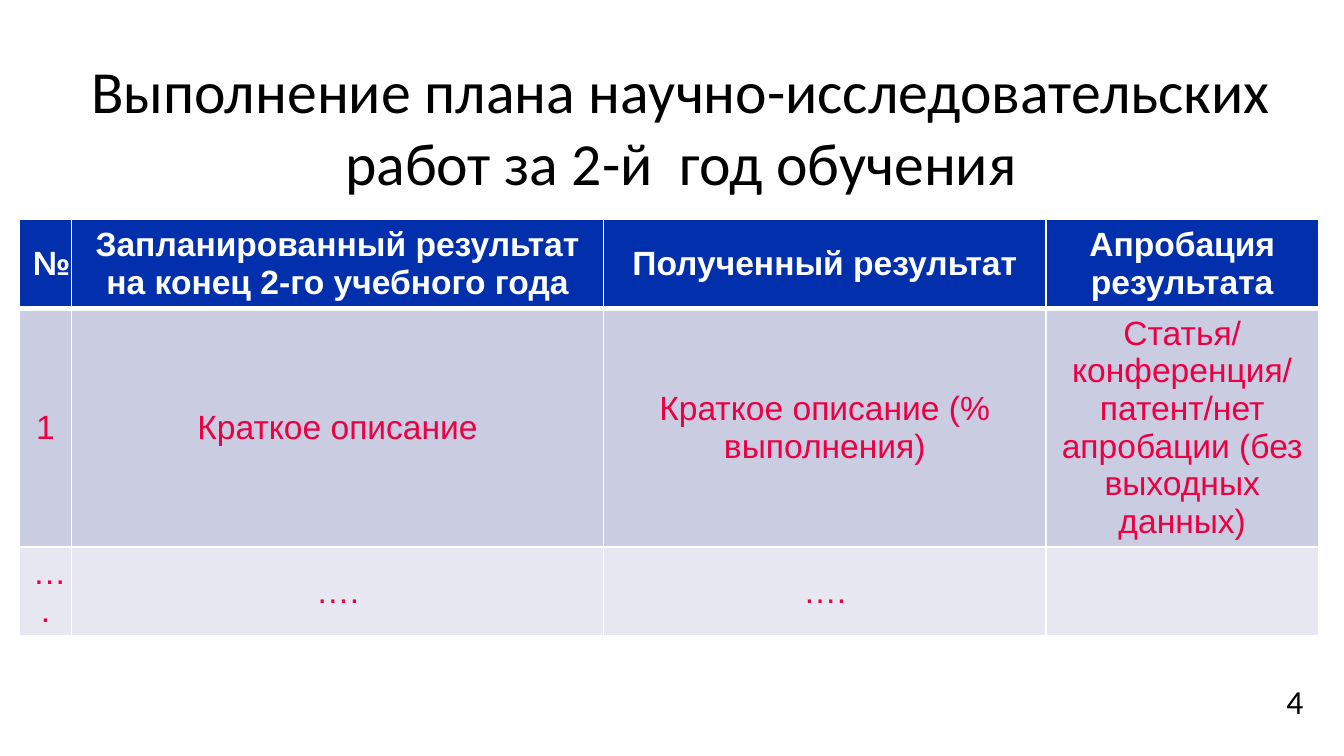
from lxml import etree
from pptx import Presentation
from pptx.dml.color import RGBColor
from pptx.enum import text as t
from pptx.oxml import ns
from pptx.util import Pt

COLORS = {
    "ink": "000000",
    "white": "FFFFFF",
    "header": "0230AC",
    "accent": "EC0044",
    "band_dark": "CACCE2",
    "band_light": "E6E7F1",
}

PLAN = [
    ["№", "Запланированный результат на конец 2-го учебного года",
     "Полученный результат", "Апробация результата"],
    ["1", "Краткое описание", "Краткое описание (% выполнения)",
     "Статья/конференция/патент/нет апробации (без выходных данных)"],
    ["….", "….", "….", ""],
]
COLUMN_WIDTHS = [28, 285, 237, 146]
ROW_HEIGHTS = [40, 29, 29]
ROW_FILLS = ["header", "band_dark", "band_light"]


def rgb(name):
    return RGBColor.from_string(COLORS[name])


def add_run(paragraph, words, size, font, color, bold=False):
    run = paragraph.add_run()
    run.text = words
    run.font.size = Pt(size)
    run.font.name = font
    run.font.bold = bold
    run.font.color.rgb = rgb(color)


def set_borders(cell, bottom_width):
    """White rules around a cell, with their own weight below it."""
    properties = cell._tc.get_or_add_tcPr()
    for side, width in (("L", 1), ("R", 1), ("T", 1), ("B", bottom_width)):
        line = etree.SubElement(properties, ns.qn(f"a:ln{side}"), w=str(Pt(width)))
        fill = etree.SubElement(line, ns.qn("a:solidFill"))
        etree.SubElement(fill, ns.qn("a:srgbClr"), val=COLORS["white"])


def place_title(slide, left, top, width, height):
    title = slide.shapes.title
    title.left, title.top, title.width, title.height = map(
        Pt, (left, top, width, height))
    frame = title.text_frame
    frame.auto_size = t.MSO_AUTO_SIZE.NONE
    frame.word_wrap = True
    frame.vertical_anchor = t.MSO_ANCHOR.BOTTOM
    heading = frame.paragraphs[0]
    heading.alignment = t.PP_ALIGN.CENTER
    add_run(heading, "Выполнение плана научно-исследовательских работ за 2-й  год обучения",
            32, "Calibri", "ink")


def place_plan(slide, left, top):
    plan = slide.shapes.add_table(
        len(PLAN), len(COLUMN_WIDTHS), Pt(left), Pt(top),
        Pt(sum(COLUMN_WIDTHS)), Pt(sum(ROW_HEIGHTS))).table
    for column, width in zip(plan.columns, COLUMN_WIDTHS):
        column.width = Pt(width)
    for row_number, (row, height) in enumerate(zip(plan.rows, ROW_HEIGHTS)):
        row.height = Pt(height)
        is_header = row_number == 0
        for cell, words in zip(row.cells, PLAN[row_number]):
            set_borders(cell, 3 if is_header else 1)
            cell.fill.solid()
            cell.fill.fore_color.rgb = rgb(ROW_FILLS[row_number])
            cell.vertical_anchor = t.MSO_ANCHOR.MIDDLE
            entry = cell.text_frame.paragraphs[0]
            entry.alignment = t.PP_ALIGN.CENTER
            if words:
                add_run(entry, words, 18, "Arial",
                        "white" if is_header else "accent", is_header)


def place_page_number(slide, left, top, width, height):
    number = slide.shapes.add_textbox(Pt(left), Pt(top), Pt(width), Pt(height))
    number.text_frame.auto_size = t.MSO_AUTO_SIZE.SHAPE_TO_FIT_TEXT
    number.text_frame.word_wrap = True
    add_run(number.text_frame.paragraphs[0], "4", 18, "Calibri", "ink")


def main():
    deck = Presentation()
    deck.slide_width, deck.slide_height = Pt(720), Pt(405)
    slide = deck.slides.add_slide(deck.slide_layouts.get_by_name("Title Only"))
    place_title(slide, 41, 60.5, 648, 49)
    place_plan(slide, 10.4, 117.5)
    place_page_number(slide, 682, 361, 21, 29)
    deck.save("out.pptx")


if __name__ == "__main__":
    main()
